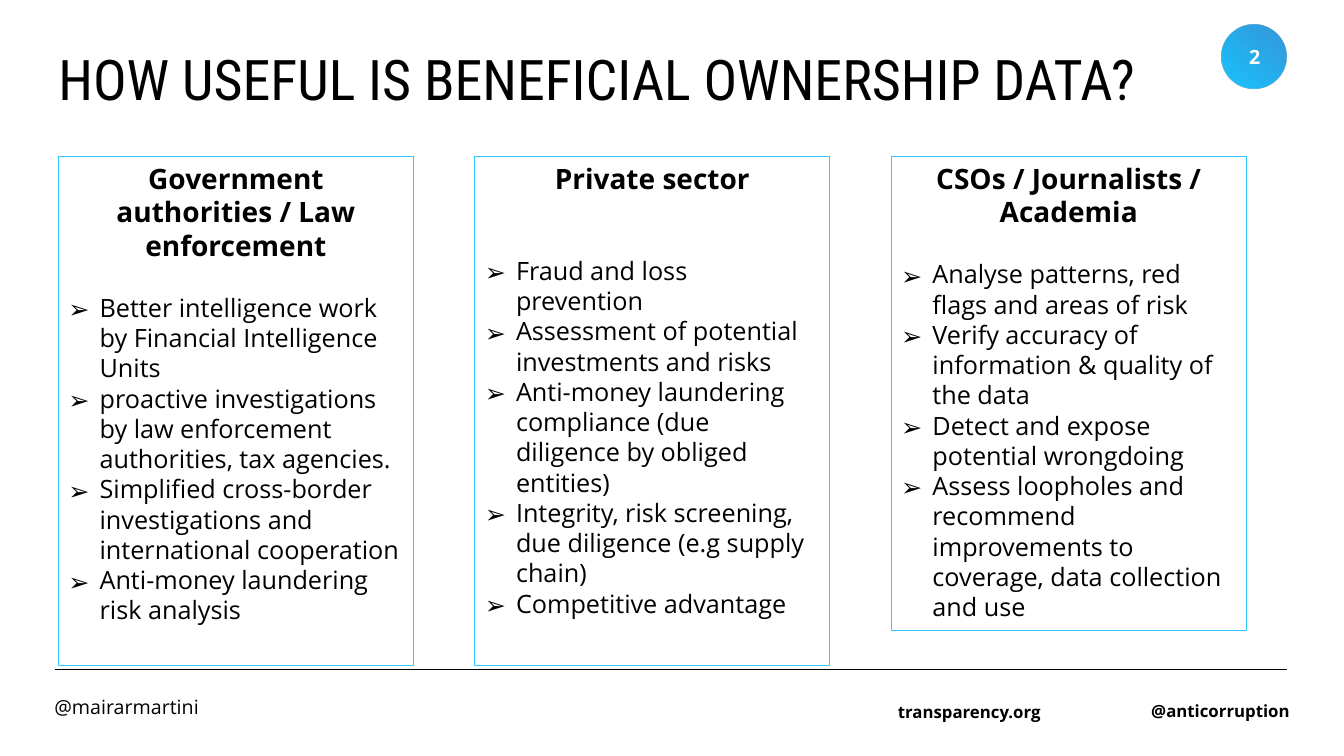
from lxml.etree import SubElement
from pptx import Presentation
from pptx.dml.color import RGBColor
from pptx.enum.shapes import MSO_CONNECTOR, MSO_SHAPE
from pptx.enum.text import MSO_ANCHOR, MSO_AUTO_SIZE, PP_ALIGN
from pptx.oxml.ns import qn
from pptx.util import Inches, Pt

BODY_FONT = "Open Sans"
TITLE_FONT = "Roboto Condensed"
BLACK, WHITE, SKY = "000000", "FFFFFF", "2FC9FF"

# heading, blank lines below the heading, box height, points
AUDIENCES = [
    ("Government authorities / Law enforcement", 1, 5.05, [
        "Better intelligence work by Financial Intelligence Units",
        "proactive investigations by law enforcement authorities, tax agencies.",
        "Simplified cross-border investigations and international cooperation",
        "Anti-money laundering risk analysis",
    ]),
    ("Private sector", 2, 5.05, [
        "Fraud and loss prevention",
        "Assessment of potential investments and risks",
        "Anti-money laundering compliance (due diligence by obliged entities)",
        "Integrity, risk screening, due diligence (e.g supply chain)",
        "Competitive advantage",
    ]),
    ("CSOs / Journalists / Academia", 1, 4.71, [
        "Analyse patterns, red flags and areas of risk",
        "Verify accuracy of information & quality of the data",
        "Detect and expose potential wrongdoing",
        "Assess loopholes and recommend improvements to coverage, "
        "data collection and use",
    ]),
]


def rgb(hex_code):
    return RGBColor.from_string(hex_code)


def style(paragraph, size, color=BLACK, bold=False, font=BODY_FONT,
          align=PP_ALIGN.LEFT):
    paragraph.alignment = align
    for run in paragraph.runs:
        run.font.name = font
        run.font.size = Pt(size)
        run.font.bold = bold
        run.font.color.rgb = rgb(color)


def add_bullet(paragraph, indent=0.31):
    properties = paragraph._p.get_or_add_pPr()
    properties.set("marL", str(Inches(indent)))
    properties.set("indent", str(-Inches(indent)))
    SubElement(properties, qn("a:buFont")).set("typeface", "Noto Sans Symbols")
    SubElement(properties, qn("a:buChar")).set("char", "➢")


def add_label(slide, box, text, size, anchor=MSO_ANCHOR.MIDDLE, **look):
    frame = slide.shapes.add_textbox(*map(Inches, box)).text_frame
    frame.word_wrap = True
    frame.vertical_anchor = anchor
    frame.text = text
    style(frame.paragraphs[0], size, **look)
    return frame.paragraphs[0]


def add_title(slide, box, text):
    title = slide.shapes.title
    title.left, title.top, title.width, title.height = map(Inches, box)
    frame = title.text_frame
    frame.word_wrap = True
    frame.vertical_anchor = MSO_ANCHOR.TOP
    frame.text = text
    frame.paragraphs[0].line_spacing = 0.9
    style(frame.paragraphs[0], 40, font=TITLE_FONT)


def add_page_badge(slide, left, top, size, number):
    disc = slide.shapes.add_shape(
        MSO_SHAPE.OVAL, *map(Inches, (left, top, size, size)))
    disc.shadow.inherit = False
    disc.line.fill.background()
    disc.fill.gradient()
    disc.fill.gradient_angle = 230
    for stop, color, position in zip(
            disc.fill.gradient_stops, ("3695D8", "08BFFF"), (0.01, 1)):
        stop.color.rgb = rgb(color)
        stop.position = position
    last_color = list(disc._element.iter(qn("a:srgbClr")))[-1]
    SubElement(last_color, qn("a:alpha")).set("val", "92000")
    add_label(slide, (left - 0.09, top + 0.12, 0.83, 0.4), number, 14,
              color=WHITE, bold=True, align=PP_ALIGN.CENTER)


def add_audience(slide, box, heading, blank_lines, points):
    """Place an outlined box with a centred heading and arrow bullets."""
    panel = slide.shapes.add_shape(MSO_SHAPE.RECTANGLE, *map(Inches, box))
    panel.shadow.inherit = False
    panel.fill.background()
    panel.line.color.rgb = rgb(SKY)
    panel.line.width = Pt(0.75)
    frame = panel.text_frame
    frame.word_wrap = True
    frame.auto_size = MSO_AUTO_SIZE.SHAPE_TO_FIT_TEXT
    frame.vertical_anchor = MSO_ANCHOR.TOP
    frame.text = heading
    style(frame.paragraphs[0], 20, bold=True, align=PP_ALIGN.CENTER)
    for index, point in enumerate(points):
        paragraph = frame.add_paragraph()
        paragraph.text = point
        if index == 0:
            paragraph.space_before = Pt(21.6 * blank_lines)
        add_bullet(paragraph)
        style(paragraph, 18)


def add_footer(slide, left, top, width):
    rule = slide.shapes.add_connector(
        MSO_CONNECTOR.STRAIGHT, Inches(left), Inches(top),
        Inches(left + width), Inches(top))
    rule.line.color.rgb = rgb(BLACK)
    rule.line.width = Pt(0.5)
    SubElement(rule._element.spPr, qn("a:effectLst"))
    speaker = add_label(slide, (left - 0.11, top + 0.25, 3.79, 0.3),
                        "@mairarmartini", 14, anchor=MSO_ANCHOR.TOP)
    speaker.line_spacing = 0.8
    for offset, drop, text in ((8.22, 0.22, "transparency.org"),
                               (10.69, 0.21, "@anticorruption")):
        add_label(slide, (left + offset, top + drop, 1.65, 0.4), text, 12,
                  bold=True, align=PP_ALIGN.RIGHT)


def main():
    deck = Presentation()
    deck.slide_width, deck.slide_height = Inches(13.33), Inches(7.5)
    slide = deck.slides.add_slide(deck.slide_layouts[5])
    slide.background.fill.solid()
    slide.background.fill.fore_color.rgb = rgb(WHITE)
    add_page_badge(slide, 12.12, 0.24, 0.64, "2")
    add_footer(slide, 0.55, 6.64, 12.21)
    add_title(slide, (0.48, 0.47, 11.78, 1.45),
              "HOW USEFUL IS BENEFICIAL OWNERSHIP DATA?")
    for column, (heading, blank_lines, height, points) in enumerate(AUDIENCES):
        add_audience(slide, (0.58 + 4.13 * column, 1.55, 3.52, height),
                     heading, blank_lines, points)
    deck.save("out.pptx")


if __name__ == "__main__":
    main()
